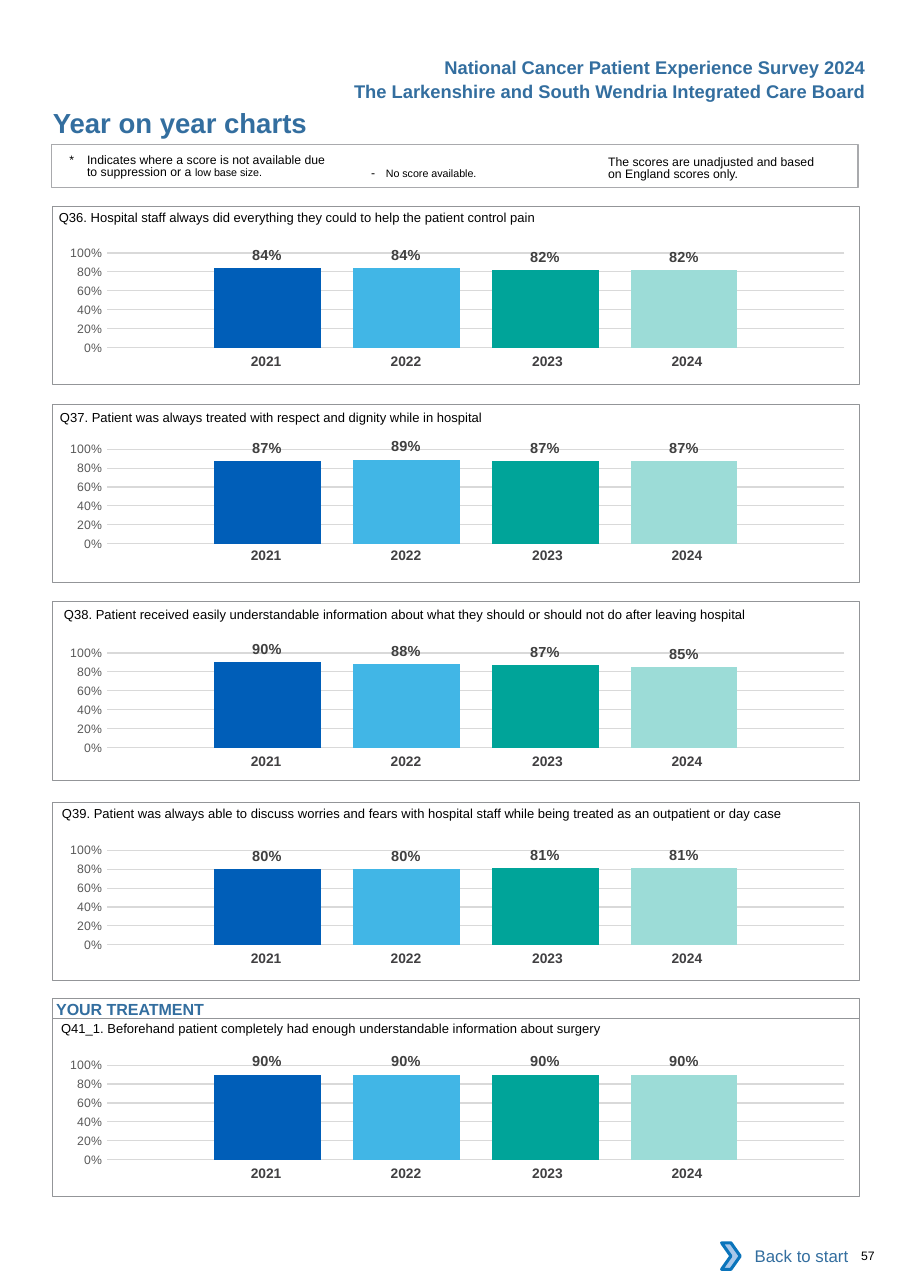
from lxml.etree import SubElement
from pptx import Presentation
from pptx.chart.data import CategoryChartData
from pptx.dml.color import RGBColor
from pptx.enum.chart import XL_CHART_TYPE, XL_LABEL_POSITION, XL_TICK_MARK
from pptx.enum.shapes import MSO_SHAPE
from pptx.enum.text import MSO_ANCHOR, MSO_AUTO_SIZE, PP_ALIGN
from pptx.oxml import parse_xml
from pptx.oxml.ns import nsdecls, qn
from pptx.util import Pt

HEADERS = [
    (33.1, "National Cancer Patient Experience Survey 2024"),
    (49, "The Larkenshire and South Wendria Integrated Care Board"),
]
TITLE = "Year on year charts"
SECTION = "YOUR TREATMENT"
YEARS = ["2021", "2022", "2023", "2024"]
YEAR_COLORS = ["005EB8", "41B6E6", "00A499", "9CDCD7"]
LEGEND = [
    (45.4, 101, 172, 11.5, [("*\tIndicates where a score is not available due to suppression or a ", 8),
                            ("low base size.", 7)]),
    (242.6, 109.5, 125, 9.6, [("-\t", 8), ("No score available.", 7)]),
    (397.4, 102, 145, 0, [("The scores are unadjusted and based on England scores only.", 8)]),
]
PANELS = [
    (134.6, (38.5, 130.5), 151.9, 227.5, [0.84, 0.84, 0.82, 0.82],
     "Q36. Hospital staff always did everything they could to help the patient control pain"),
    (264.2, (39.2, 261), 280.1, 354.2, [0.87, 0.89, 0.87, 0.87],
     "Q37. Patient was always treated with respect and dignity while in hospital"),
    (393.1, (41.8, 389.8), 413.3, 488.9, [0.9, 0.88, 0.87, 0.85],
     "Q38. Patient received easily understandable information about what they should "
     "or should not do after leaving hospital"),
    (524.2, (40.5, 519.8), 542.2, 617.8, [0.8, 0.8, 0.81, 0.81],
     "Q39. Patient was always able to discuss worries and fears with hospital staff "
     "while being treated as an outpatient or day case"),
    (665.3, (39.9, 660.7), 682.6, 758.2, [0.9, 0.9, 0.9, 0.9],
     "Q41_1. Beforehand patient completely had enough understandable information about surgery"),
]
YEAR_COLUMNS = [(91.4, 0), (91.4, 0), (96.5, 2.9), (91.4, 8.6)]
PLOT = {"x": 0.079, "y": 0.145, "w": 0.915, "h": 0.666}
NO_STYLE = "{2D5ABB26-0587-4C30-8999-92F81FD0307C}"
BLUE, BLACK, GREY = "336E9F", "000000", "939598"
LEFT, WIDTH = 34.5, 527


def rgb(value):
    return RGBColor.from_string(value)


def style_font(font, size, color, bold=False):
    font.name = "Arial"
    font.size = Pt(size)
    font.bold = bold
    font.color.rgb = rgb(color)


def write(tf, runs, color=BLACK, bold=False, align=PP_ALIGN.LEFT, inset=(0, 0, 0, 0), anchor=MSO_ANCHOR.TOP):
    tf.word_wrap = True
    tf.auto_size = MSO_AUTO_SIZE.NONE
    tf.vertical_anchor = anchor
    tf.margin_left, tf.margin_top, tf.margin_right, tf.margin_bottom = [Pt(v) for v in inset]
    p = tf.paragraphs[0]
    p.alignment = align
    for text, size in runs:
        r = p.add_run()
        r.text = text
        style_font(r.font, size, color, bold)
    return p


def add_text(s, box, runs, **options):
    sp = s.shapes.add_textbox(*[Pt(v) for v in box])
    return write(sp.text_frame, runs, **options)


def add_box(s, box, line=None, weight=0.5, fill=None, kind=MSO_SHAPE.RECTANGLE):
    sp = s.shapes.add_shape(kind, *[Pt(v) for v in box])
    sp.shadow.inherit = False
    if fill:
        sp.fill.solid()
        sp.fill.fore_color.rgb = rgb(fill)
    else:
        sp.fill.background()
    if line:
        sp.line.color.rgb = rgb(line)
        sp.line.width = Pt(weight)
    else:
        sp.line.fill.background()
    return sp


def add_score_chart(s, top, scores):
    data = CategoryChartData(number_format="0%")
    data.categories = ["1"]
    for n, score in enumerate(scores, 1):
        data.add_series(f"Series {n}", [score])
    chart = s.shapes.add_chart(XL_CHART_TYPE.COLUMN_CLUSTERED, Pt(28.1), Pt(top),
                               Pt(WIDTH), Pt(92.9), data).chart
    chart.has_title = chart.has_legend = False
    chart.font.name = "Calibri"
    chart.font.size = Pt(10)
    chart.font.color.rgb = rgb(BLACK)
    chart.category_axis.visible = False
    axis = chart.value_axis
    axis.minimum_scale, axis.maximum_scale, axis.major_unit = 0, 1, 0.2
    axis.major_tick_mark = axis.minor_tick_mark = XL_TICK_MARK.NONE
    axis.format.line.fill.background()
    grid = axis.major_gridlines.format.line
    grid.color.rgb = rgb("D9D9D9")
    grid.width = Pt(0.75)
    ticks = axis.tick_labels
    ticks.number_format, ticks.number_format_is_linked = "0%", False
    style_font(ticks.font, 8, "595959")
    plot = chart.plots[0]
    plot.gap_width, plot.overlap, plot.vary_by_categories = 200, -30, False
    for series, color in zip(plot.series, YEAR_COLORS):
        series.format.fill.solid()
        series.format.fill.fore_color.rgb = rgb(color)
        labels = series.data_labels
        labels.show_value = True
        labels.position = XL_LABEL_POSITION.OUTSIDE_END
        labels.number_format, labels.number_format_is_linked = "0%", False
        style_font(labels.font, 9.5, "404040", True)
    area = chart.element.find(".//" + qn("c:plotArea"))
    for old in area.findall(qn("c:layout")):
        area.remove(old)
    layout = parse_xml(f"<c:layout {nsdecls('c')}><c:manualLayout/></c:layout>")
    settings = {"layoutTarget": "inner", "xMode": "edge", "yMode": "edge", **PLOT}
    for tag, value in settings.items():
        SubElement(layout[0], qn("c:" + tag)).set("val", str(value))
    area.insert(0, layout)


def add_years(s, top):
    total = sum(width for width, _ in YEAR_COLUMNS)
    frame = s.shapes.add_table(1, len(YEARS), Pt(124.6), Pt(top), Pt(total), Pt(19.4))
    frame.element.find(".//" + qn("a:tableStyleId")).text = NO_STYLE
    table = frame.table
    table.first_row = table.horz_banding = False
    for i, (year, (width, right)) in enumerate(zip(YEARS, YEAR_COLUMNS)):
        table.columns[i].width = Pt(width)
        cell = table.cell(0, i)
        cell.fill.background()
        cell.margin_left, cell.margin_right = Pt(7.2), Pt(right)
        cell.margin_top = cell.margin_bottom = Pt(3.6)
        p = cell.text_frame.paragraphs[0]
        p.alignment = PP_ALIGN.CENTER
        r = p.add_run()
        r.text = year
        style_font(r.font, 9, "414042", True)


def main():
    prs = Presentation()
    prs.slide_width, prs.slide_height = Pt(594.72), Pt(841.68)
    s = prs.slides.add_slide(prs.slide_layouts[5])

    title = s.shapes.title
    title.left, title.top, title.width, title.height = Pt(34.5), Pt(69.5), Pt(324), Pt(21.6)
    write(title.text_frame, [(TITLE, 18)], color=BLUE, bold=True)
    for top, text in HEADERS:
        add_text(s, (166, top, 407, 21.6), [(text, 12)], color=BLUE, bold=True,
                 align=PP_ALIGN.RIGHT, inset=(7.2, 3.6, 7.2, 3.6))

    add_box(s, (33.8, 94.3, WIDTH, 28.1), "A9AAAD", 0.75)
    for left, top, width, hang, runs in LEGEND:
        p = add_text(s, (left, top, width, 18), runs)
        p.line_spacing = Pt(8.1)
        if hang:
            props = p._p.get_or_add_pPr()
            props.set("marL", str(Pt(hang)))
            props.set("indent", str(-Pt(hang)))

    for top, (text_left, text_top), chart_top, years_top, scores, question in PANELS:
        add_years(s, years_top)
        add_score_chart(s, chart_top, scores)
        add_box(s, (LEFT, top, WIDTH, 116.6), GREY)
        add_text(s, (text_left, text_top, 520, 17.3), [(question, 8.5)], inset=(0, 6.5, 0, 0))

    section = add_box(s, (LEFT, 652.3, WIDTH, 13), GREY)
    write(section.text_frame, [(SECTION, 10.5)], color=BLUE, bold=True, inset=(2.2, 0.7, 0, 0))

    back = add_box(s, (476.6, 805.7, 85, 30.2), fill="FFFFFF")
    write(back.text_frame, [("Back to start", 11)], color=BLUE, align=PP_ALIGN.RIGHT,
          inset=(7.2, 3.6, 7.2, 3.6), anchor=MSO_ANCHOR.MIDDLE)
    add_box(s, (471.6, 812.2, 12.2, 17.3), "0A74BB", 2, "A8C7E9", MSO_SHAPE.CHEVRON)
    add_text(s, (562.8, 815.8, 29, 10), [("57", 8)])

    prs.save("out.pptx")


if __name__ == "__main__":
    main()
